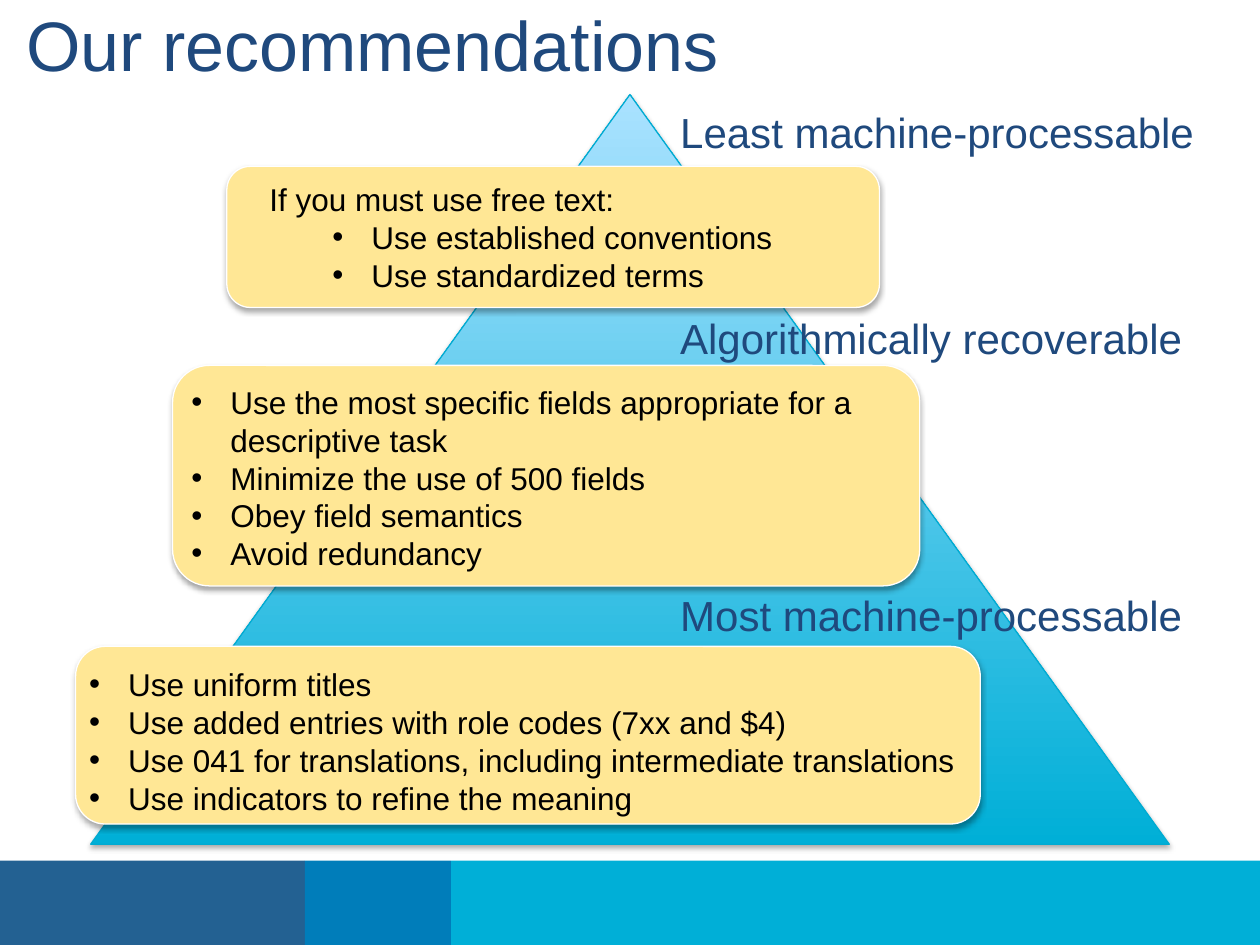
from lxml import etree
from pptx import Presentation
from pptx.dml.color import RGBColor
from pptx.enum.shapes import MSO_SHAPE
from pptx.enum.text import MSO_ANCHOR, PP_ALIGN
from pptx.oxml import parse_xml
from pptx.oxml.ns import nsdecls, qn
from pptx.util import Inches, Pt

NAVY = RGBColor(0x1F, 0x49, 0x7D)
STEEL = RGBColor(0x23, 0x61, 0x92)
BLUE = RGBColor(0x00, 0x7D, 0xBA)
CYAN = RGBColor(0x00, 0xAF, 0xD7)
CYAN_EDGE = RGBColor(0x00, 0xAB, 0xD2)
PALE_BLUE = RGBColor(0xAA, 0xE2, 0xFF)
YELLOW = RGBColor(0xFF, 0xE7, 0x95)
WHITE = RGBColor(0xFF, 0xFF, 0xFF)
BLACK = RGBColor(0x00, 0x00, 0x00)

FONT = "Arial"
HANGING = 0.31
LABEL_LEFT = 5.3

# Each card: its box, its text box, and (text, bullet indent or None) lines.
CARDS = [
    ((0.6, 5.13, 7.18, 1.41), (0.61, 5.23, 7.57, 1.31), [
        ("Use uniform titles", HANGING),
        ("Use added entries with role codes (7xx and $4)", HANGING),
        ("Use 041 for translations, including intermediate translations", HANGING),
        ("Use indicators to refine the meaning", HANGING),
    ]),
    ((1.37, 2.9, 5.93, 1.75), (1.42, 2.99, 5.99, 1.62), [
        ("Use the most specific fields appropriate for a descriptive task", HANGING),
        ("Minimize the use of 500 fields", HANGING),
        ("Obey field semantics", HANGING),
        ("Avoid redundancy", HANGING),
    ]),
    ((1.8, 1.32, 5.18, 1.12), (2.04, 1.38, 4.7, 1), [
        ("If you must use free text:", None),
        ("Use established conventions", 0.5 + HANGING),
        ("Use standardized terms", 0.5 + HANGING),
    ]),
]
LABELS = [
    ("Least machine-processable", 0.8, 4.32),
    ("Most machine-processable", 4.63, 4.23),
    ("Algorithmically recoverable", 2.43, 4.23),
]


def inches(box):
    return [Inches(length) for length in box]


def format_runs(paragraph, size, color):
    for run in paragraph.runs:
        run.font.name = FONT
        run.font.size = Pt(size)
        run.font.color.rgb = color


def add_soft_shadow(shape):
    shape.shadow.inherit = False
    effects = shape._element.spPr.find(qn("a:effectLst"))
    effects.append(parse_xml(
        f'<a:outerShdw {nsdecls("a")} blurRad="{Pt(3.1)}" dist="{Pt(1.8)}" '
        'dir="5400000" rotWithShape="0"><a:srgbClr val="000000">'
        '<a:alpha val="35000"/></a:srgbClr></a:outerShdw>'))


def add_bullet(paragraph, indent):
    properties = paragraph._p.get_or_add_pPr()
    properties.set("marL", str(Inches(indent)))
    properties.set("indent", str(-Inches(HANGING)))
    etree.SubElement(properties, qn("a:buFont"), typeface=FONT)
    etree.SubElement(properties, qn("a:buChar"), char="•")


def add_footer(slide, box):
    left, top, width, height = box
    edges = [left, left + 2.42, left + 3.58, left + width]
    for start, end, color in zip(edges, edges[1:], (STEEL, BLUE, CYAN)):
        band = slide.shapes.add_shape(
            MSO_SHAPE.RECTANGLE, *inches((start, top, end - start, height)))
        band.shadow.inherit = False
        band.fill.solid()
        band.fill.fore_color.rgb = color
        band.line.fill.background()


def add_pyramid(slide, box):
    pyramid = slide.shapes.add_shape(MSO_SHAPE.ISOSCELES_TRIANGLE, *inches(box))
    pyramid.fill.gradient()
    pyramid.fill.gradient_angle = 90
    for stop, color in zip(pyramid.fill.gradient_stops, (CYAN, PALE_BLUE)):
        stop.color.rgb = color
    pyramid.line.color.rgb = CYAN_EDGE
    pyramid.line.width = Pt(0.75)
    add_soft_shadow(pyramid)


def add_card(slide, box, text_box, lines):
    card = slide.shapes.add_shape(MSO_SHAPE.ROUNDED_RECTANGLE, *inches(box))
    card.fill.solid()
    card.fill.fore_color.rgb = YELLOW
    card.line.color.rgb = WHITE
    card.line.width = Pt(0.75)
    add_soft_shadow(card)

    text_frame = slide.shapes.add_textbox(*inches(text_box)).text_frame
    text_frame.word_wrap = True
    text_frame.text = "\n".join(text for text, _ in lines)
    for paragraph, (_, indent) in zip(text_frame.paragraphs, lines):
        format_runs(paragraph, 18, BLACK)
        if indent is not None:
            paragraph.level = 1 if indent > HANGING else 0
            add_bullet(paragraph, indent)


def add_label(slide, text, box):
    text_frame = slide.shapes.add_textbox(*inches(box)).text_frame
    text_frame.word_wrap = False
    text_frame.text = text
    format_runs(text_frame.paragraphs[0], 24, NAVY)


def set_title(slide, text, box):
    title = slide.shapes.title
    title.left, title.top, title.width, title.height = inches(box)
    title.text_frame.text = text
    title.text_frame.vertical_anchor = MSO_ANCHOR.TOP
    paragraph = title.text_frame.paragraphs[0]
    paragraph.alignment = PP_ALIGN.LEFT
    paragraph.line_spacing = 0.9
    format_runs(paragraph, 40, NAVY)


def main():
    presentation = Presentation()
    presentation.slide_width, presentation.slide_height = Inches(10), Inches(7.5)
    slide = presentation.slides.add_slide(presentation.slide_layouts[5])
    set_title(slide, "Our recommendations", (0.11, 0.04, 11.09, 1.15))
    add_footer(slide, (0, 6.83, 10, 0.67))
    add_pyramid(slide, (0.72, 0.75, 8.56, 5.95))
    for box, text_box, lines in CARDS:
        add_card(slide, box, text_box, lines)
    for text, top, width in LABELS:
        add_label(slide, text, (LABEL_LEFT, top, width, 0.5))
    presentation.save("out.pptx")


if __name__ == "__main__":
    main()
